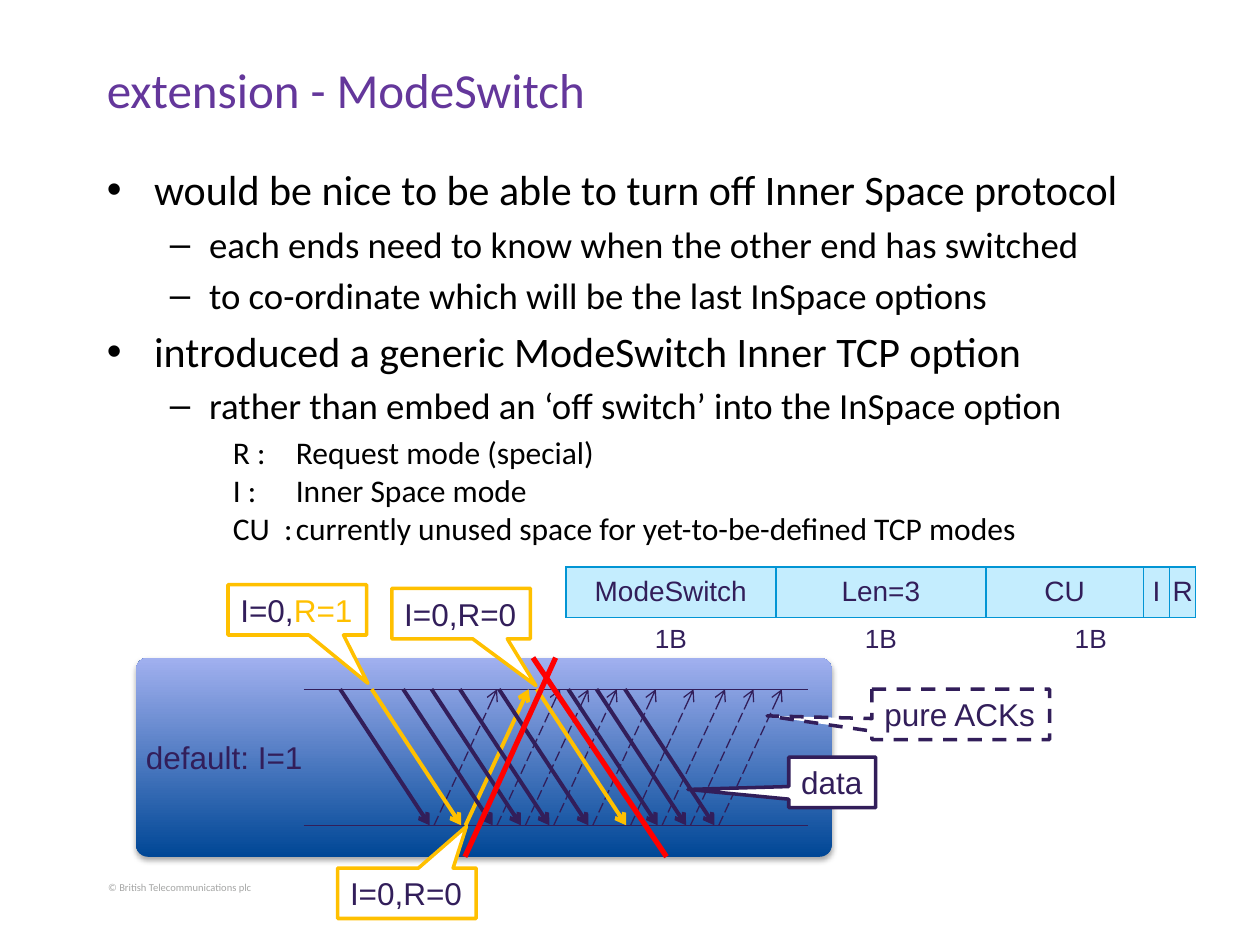
from lxml import etree
from pptx import Presentation, util as u
from pptx.dml.color import RGBColor
from pptx.enum import dml, shapes, text
from pptx.oxml.ns import qn

# The slide is a grid of 100 columns by 75 rows of equal units.
COLS, ROWS = 100, 75
UNIT = u.Inches(10) // COLS

INK = RGBColor(0x32, 0x1E, 0x5A)
PURPLE = RGBColor(0x64, 0x37, 0x9B)
BLACK = RGBColor(0, 0, 0)
WHITE = RGBColor(255, 255, 255)
GREY = RGBColor(0xA5, 0xA6, 0xA5)
AMBER = RGBColor(0xFF, 0xC0, 0)
RED = RGBColor(255, 0, 0)
DEEP_BLUE = RGBColor(0, 0x47, 0x96)
PALE_BLUE = RGBColor(0xA1, 0xB0, 0xEF)
CELL_BLUE = RGBColor(0xC4, 0xED, 0xFE)
BORDER_BLUE = RGBColor(0x02, 0x95, 0xD4)

# Text size, left margin, hanging indent and bullet of each outline level
LEVELS = [(24, 3.75, -3.75, "•"), (21, 8.12, -3.12, "–"), (18, 10, 0, None)]
OUTLINE = [
    (0, "would be nice to be able to turn off Inner Space protocol"),
    (1, "each ends need to know when the other end has switched"),
    (1, "to co-ordinate which will be the last InSpace options"),
    (0, "introduced a generic ModeSwitch Inner TCP option"),
    (1, "rather than embed an ‘off switch’ into the InSpace option"),
    (2, "R :\tRequest mode (special)\vI :\tInner Space mode\v"
        "CU  :\tcurrently unused space for yet-to-be-defined TCP modes"),
]

TOP_LINE, BOTTOM_LINE = 54.7, 65.5
SEND_STARTS = [27, 29.5, 32, 34.25, 36.5, 39.6, 42.6, 45.1, 47.35, 49.6]
SEND_RUN, REPLY_GAP, REPLY_RUN = 7.1, 7.45, 5
SWITCH_SENDS, SWITCH_REPLIES = (1, 6), (1,)


def grid(*values):
    return [u.Emu(round(v * UNIT)) for v in values]


def child(parent, tag, **attrs):
    return etree.SubElement(parent, qn(tag), attrs)


def write(p, words, size=18, color=INK, font="Arial", align=None):
    if align is not None:
        p.alignment = align
    r = p.add_run()
    # A vertical tab becomes a line break only through paragraph text.
    if "\v" in words:
        p.text = words
    else:
        r.text = words
    for r in p.runs if "\v" in words else [r]:
        r.font.size, r.font.name = u.Pt(size), font
        r.font.color.rgb = color


def add_text(s, at, words="", wrap=True, **fmt):
    tf = s.shapes.add_textbox(*grid(*at)).text_frame
    tf.word_wrap = wrap
    if words:
        write(tf.paragraphs[0], words, **fmt)
    return tf


def add_outline(s, at):
    tf = add_text(s, at)
    for i, (level, words) in enumerate(OUTLINE):
        size, margin, indent, bullet = LEVELS[level]
        p = tf.add_paragraph() if i else tf.paragraphs[0]
        p.level = level
        if i:
            p.space_before = u.Pt(size * 0.2)
        pPr = p._p.get_or_add_pPr()
        left, hang = grid(margin, indent)
        pPr.set("marL", str(left))
        pPr.set("indent", str(hang))
        if bullet:
            child(pPr, "a:buFont", typeface="Arial")
            child(pPr, "a:buChar", char=bullet)
        write(p, words, size, BLACK, "Calibri")


def add_line(s, start, end, color=INK, width=0.75, dash=None, arrow=False):
    c = s.shapes.add_connector(shapes.MSO_CONNECTOR.STRAIGHT,
                               *grid(*start, *end))
    c.line.color.rgb, c.line.width = color, u.Pt(width)
    if dash:
        c.line.dash_style = dash
    if arrow:
        child(c.line._get_or_add_ln(), "a:tailEnd", type="arrow")
    child(c._element.spPr, "a:effectLst")


def add_callout(s, at, tip, parts, color=AMBER, dash=None):
    """tip is the pointer's offset from the centre, in shares of the box."""
    sp = s.shapes.add_shape(shapes.MSO_SHAPE.RECTANGULAR_CALLOUT, *grid(*at))
    sp.shadow.inherit = False
    sp.adjustments[0], sp.adjustments[1] = tip
    sp.fill.solid()
    sp.fill.fore_color.rgb = WHITE
    sp.line.color.rgb, sp.line.width = color, u.Pt(2)
    if dash:
        sp.line.dash_style = dash
    tf = sp.text_frame
    tf.word_wrap = False
    for words, ink in parts:
        write(tf.paragraphs[0], words, color=ink, align=text.PP_ALIGN.LEFT)


def add_panel(s, at):
    sp = s.shapes.add_shape(shapes.MSO_SHAPE.ROUNDED_RECTANGLE, *grid(*at))
    sp.adjustments[0] = 0.06
    sp.line.fill.background()
    sp.fill.gradient()
    sp.fill.gradient_angle = 90
    for stop, color in zip(sp.fill.gradient_stops, (DEEP_BLUE, PALE_BLUE)):
        stop.color.rgb = color
    sp.shadow.inherit = False
    effects = sp._element.spPr.find(qn("a:effectLst"))
    shadow = child(effects, "a:outerShdw", blurRad=str(u.Pt(3.1)),
                   dist=str(u.Pt(1.8)), dir="5400000", rotWithShape="0")
    child(child(shadow, "a:srgbClr", val="000000"), "a:alpha", val="35000")


def set_borders(cell, sides):
    """Draw the named sides of a cell and hide the others."""
    tcPr = cell._tc.get_or_add_tcPr()
    for i, side in enumerate("LRTB"):
        ln = etree.Element(qn(f"a:ln{side}"), w=str(u.Pt(1)))
        if side in sides:
            child(child(ln, "a:solidFill"), "a:srgbClr", val=str(BORDER_BLUE))
        else:
            child(ln, "a:noFill")
        tcPr.insert(i, ln)


def add_option_table(s, at):
    table = s.shapes.add_table(2, 5, *grid(*at)).table
    table.first_row = table.horz_banding = False
    for column, width in zip(table.columns, grid(16.67, 16.67, 12.5, 2.08, 2.08)):
        column.width = width
    for row, height in zip(table.rows, grid(4, 3.5)):
        row.height = height
    rows = [(["ModeSwitch", "Len=3", "CU", "I", "R"], 16, "LRTB"),
            (["1B", "1B", "1B", "", ""], 15, "T")]
    table.cell(1, 2).merge(table.cell(1, 4))
    for y, (labels, size, sides) in enumerate(rows):
        for x, label in enumerate(labels):
            cell = table.cell(y, x)
            cell.margin_left = cell.margin_right = 0
            cell.margin_top = cell.margin_bottom = 0
            cell.vertical_anchor = text.MSO_ANCHOR.MIDDLE
            if y:
                cell.fill.background()
            else:
                cell.fill.solid()
                cell.fill.fore_color.rgb = CELL_BLUE
            set_borders(cell, sides)
            if label:
                write(cell.text_frame.paragraphs[0], label, size,
                      align=text.PP_ALIGN.CENTER)


def add_exchange(s):
    """Time lines of both ends, with each segment sent and its reply."""
    for y in (BOTTOM_LINE, TOP_LINE):
        add_line(s, (24.1, y), (64.1, y))
    switch = dict(color=AMBER, width=2.25, arrow=True)
    data = dict(width=2.25, arrow=True)
    ack = dict(dash=dml.MSO_LINE.LONG_DASH, arrow=True)
    for i, x in enumerate(SEND_STARTS):
        add_line(s, (x, TOP_LINE), (x + SEND_RUN, BOTTOM_LINE),
                 **(switch if i in SWITCH_SENDS else data))
        reply = x + REPLY_GAP
        add_line(s, (reply, BOTTOM_LINE), (reply + REPLY_RUN, TOP_LINE),
                 **(switch if i in SWITCH_REPLIES else ack))


def main():
    prs = Presentation()
    prs.slide_width, prs.slide_height = grid(COLS, ROWS)
    s = prs.slides.add_slide(prs.slide_layouts[6])

    add_text(s, (7.6, 69.4, 15.1, 3.5), "© British Telecommunications plc",
             size=6, color=GREY, font="Calibri")
    add_panel(s, (10.8, 52.2, 55.2, 15.8))
    add_text(s, (7.5, 4.2, 85, 10.8), "extension - ModeSwitch",
             size=28, color=PURPLE, font="Calibri")
    add_outline(s, (7.5, 12.5, 85, 33.3))
    add_option_table(s, (44.9, 45, 50, 7.5))
    add_exchange(s)

    add_callout(s, (18.1, 46.4, 11, 4), (0.51, 1.46),
                [("I=0,", INK), ("R=1", AMBER)])
    for start, end in ((42.3, 52.9), (44.1, 36.9)):
        add_line(s, (start, 52.2), (end, 68), RED, 3)
    confirm = [("I=0,R=0", INK)]
    add_callout(s, (26.8, 68.9, 11, 4), (0.43, -1.33), confirm)
    add_callout(s, (31.1, 46.7, 11, 4), (0.54, 1.43), confirm)
    add_text(s, (10.6, 58.1, 14.6, 4), "default: I=1", wrap=False)
    add_callout(s, (62.6, 60.1, 6.9, 4), (-1.66, 0.14), [("data", INK)], INK)
    add_callout(s, (69.2, 54.7, 14.1, 4), (-1.09, 0.03),
                [("pure ACKs", INK)], INK, dml.MSO_LINE.DASH)

    prs.save("out.pptx")


if __name__ == "__main__":
    main()
